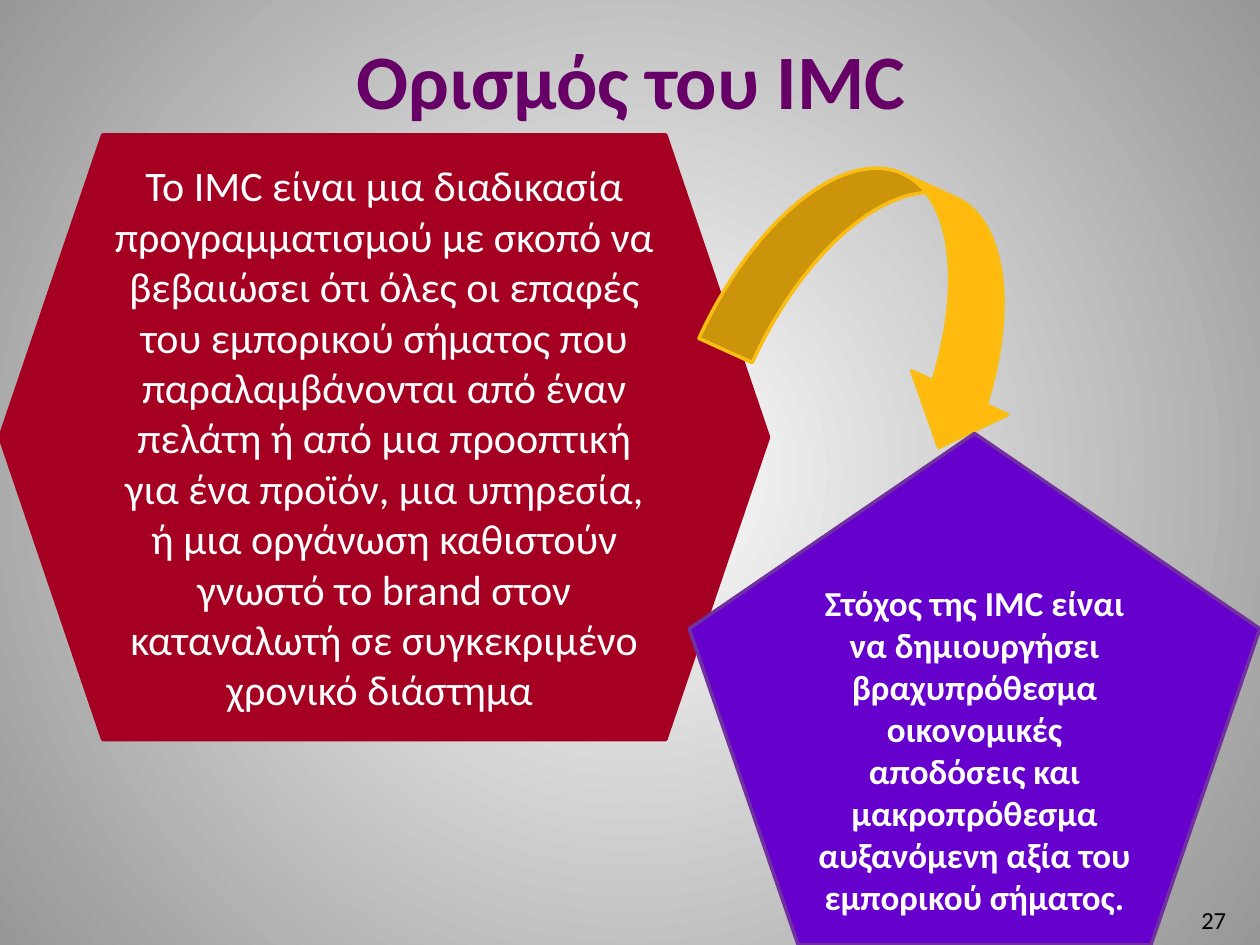
from lxml.etree import SubElement
from pptx import Presentation
from pptx.dml.color import RGBColor
from pptx.enum.shapes import MSO_SHAPE
from pptx.enum.text import MSO_ANCHOR, PP_ALIGN
from pptx.oxml.ns import qn
from pptx.util import Inches, Pt

COLORS = {
    "title": "660066", "black": "000000", "white": "FFFFFF", "edge": "979797",
    "red": "A50021", "gold": "FFBA0D", "gold_line": "F9BD13",
    "violet": "6600CC", "violet_line": "7030A0",
}

TITLE = "Ορισμός του IMC"
NUMBER = "27"
DEFINITION = (
    "Το IMC είναι μια διαδικασία προγραμματισμού με σκοπό να βεβαιώσει ότι "
    "όλες οι επαφές του εμπορικού σήματος που παραλαμβάνονται από έναν πελάτη "
    "ή από μια προοπτική για ένα προϊόν, μια υπηρεσία, ή μια οργάνωση "
    "καθιστούν γνωστό το brand στον καταναλωτή σε συγκεκριμένο χρονικό διάστημα "
)
GOAL = (
    "Στόχος της IMC είναι να δημιουργήσει βραχυπρόθεσμα οικονομικές αποδόσεις "
    "και μακροπρόθεσμα αυξανόμενη αξία του εμπορικού σήματος."
)

# box, text, size, color, bold, alignment
LABELS = [
    ((0.51, 0, 9, 1.25), TITLE, 44, "title", True, PP_ALIGN.CENTER),
    ((7.5, 7.1, 2.33, 0.4), NUMBER, 14, "black", False, PP_ALIGN.RIGHT),
]
# preset, box, rotation, adjustments, fill, line, (text, size, bold)
SHAPES = [
    (MSO_SHAPE.HEXAGON, (0, 1.07, 6.1, 4.8), 0, (0.17,),
     "red", "red", (DEFINITION, 24, False)),
    (MSO_SHAPE.CURVED_DOWN_ARROW, (5.82, 1.43, 2.51, 1.86), 24.5, (0.25, 0.45, 0.25),
     "gold", "gold_line", None),
    (MSO_SHAPE.REGULAR_PENTAGON, (5.47, 3.44, 4.53, 4.06), 0, (),
     "violet", "violet_line", (GOAL, 20, True)),
]


def rgb(name):
    return RGBColor.from_string(COLORS[name])


def write(sp, text, size, color, bold, align=PP_ALIGN.CENTER):
    tf = sp.text_frame
    tf.word_wrap = True
    tf.vertical_anchor = MSO_ANCHOR.MIDDLE
    p = tf.paragraphs[0]
    p.alignment = align
    r = p.add_run()
    r.text = text
    for key, value in {"name": "Calibri", "size": Pt(size), "bold": bold}.items():
        setattr(r.font, key, value)
    r.font.color.rgb = rgb(color)


def radial_background(s, center, edge):
    fill = s.background.fill
    fill.gradient()
    for stop, color, position in zip(fill.gradient_stops, (center, edge), (0, 1)):
        stop.color.rgb = rgb(color)
        stop.position = position
    grad = s.element.find(".//" + qn("a:gradFill"))
    grad.remove(grad.find(qn("a:lin")))
    circle = SubElement(grad, qn("a:path"), path="circle")
    SubElement(circle, qn("a:fillToRect"), dict.fromkeys("ltrb", "50000"))


def main():
    prs = Presentation()
    prs.slide_width, prs.slide_height = Inches(10), Inches(7.5)
    s = prs.slides.add_slide(prs.slide_layouts[6])
    radial_background(s, "white", "edge")

    for box, *label in LABELS:
        write(s.shapes.add_textbox(*map(Inches, box)), *label)

    for preset, box, rotation, adjustments, fill, line, label in SHAPES:
        sp = s.shapes.add_shape(preset, *map(Inches, box))
        sp.shadow.inherit = False
        sp.rotation = rotation
        for i, value in enumerate(adjustments):
            sp.adjustments[i] = value
        sp.fill.solid()
        sp.fill.fore_color.rgb = rgb(fill)
        sp.line.color.rgb = rgb(line)
        sp.line.width = Pt(2)
        if label:
            text, size, bold = label
            write(sp, text, size, "white", bold)

    prs.save("out.pptx")


if __name__ == "__main__":
    main()
